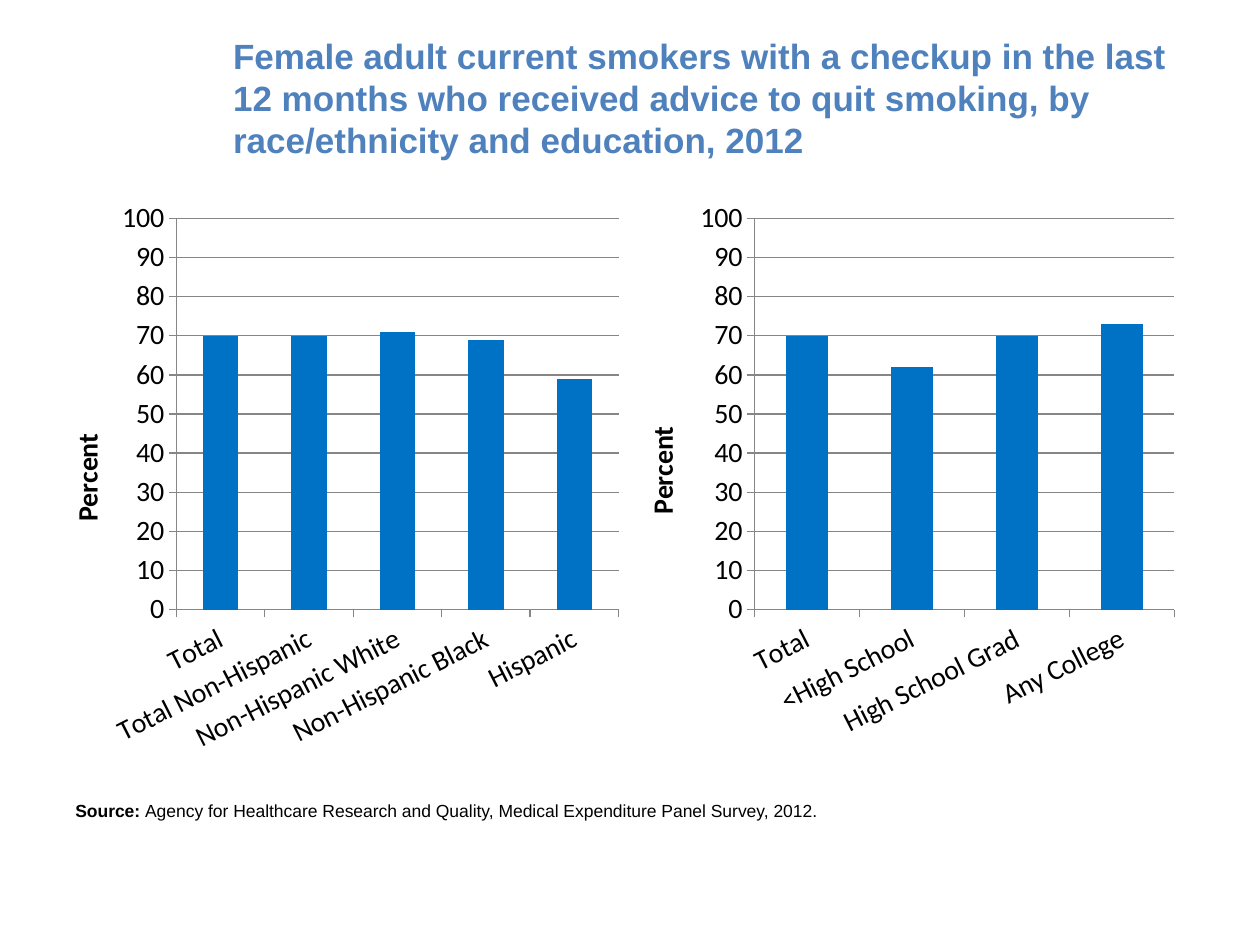
import pptx
import pptx.chart.data
import pptx.dml.color
import pptx.enum.chart
import pptx.enum.text
import pptx.oxml
import pptx.oxml.ns
import pptx.util
from pptx.util import Cm

BLACK, GRID_GREY, BAR_BLUE, TITLE_BLUE = "000000", "868686", "0072C6", "4F81BD"
CHART_TOP, CHART_SIZE = Cm(4.06), Cm(11.43)
LABEL_ANGLE = -27

# left edge, values by group, inner plot area (x, y, width, height as shares)
CHARTS = [
    (Cm(1.27),
     {"Total": 70, "Total Non-Hispanic": 70, "Non-Hispanic White": 71,
      "Non-Hispanic Black": 69, "Hispanic": 59},
     (0.2, 0.03, 0.78, 0.69)),
    (Cm(12.7),
     {"Total": 70, "<High School": 62, "High School Grad": 70, "Any College": 73},
     (0.22, 0.03, 0.74, 0.69)),
]


def rgb(hex_colour):
    return pptx.dml.color.RGBColor.from_string(hex_colour)


def set_all(target, values):
    for attribute, value in values.items():
        setattr(target, attribute, value)


def style_font(font, size, colour=BLACK, name="Arial", bold=False):
    set_all(font, {"name": name, "size": pptx.util.Pt(size), "bold": bold})
    font.color.rgb = rgb(colour)


def style_line(line, colour=GRID_GREY):
    line.color.rgb = rgb(colour)
    line.width = pptx.util.Pt(0.75)


def add_text(slide, place, runs, size, colour, anchor):
    """Add one paragraph made of (text, bold) runs."""
    frame = slide.shapes.add_textbox(*place).text_frame
    set_all(frame, {"word_wrap": True, "vertical_anchor": anchor})
    paragraph = frame.paragraphs[0]
    for text, bold in runs:
        run = paragraph.add_run()
        run.text = text
        style_font(run.font, size, colour, bold=bold)


def set_plot_area(chart, shares):
    parts = "".join(f'<c:{tag} val="{share}"/>' for tag, share in zip("xywh", shares))
    layout = pptx.oxml.parse_xml(
        f'<c:layout {pptx.oxml.ns.nsdecls("c")}><c:manualLayout>'
        '<c:layoutTarget val="inner"/><c:xMode val="edge"/><c:yMode val="edge"/>'
        f'{parts}</c:manualLayout></c:layout>')
    plot_area = chart._chartSpace.chart.plotArea
    for old in plot_area.findall(pptx.oxml.ns.qn("c:layout")):
        plot_area.remove(old)
    plot_area.insert(0, layout)


def style_axes(chart):
    groups, percent = chart.category_axis, chart.value_axis
    for axis in (groups, percent):
        axis.major_tick_mark = pptx.enum.chart.XL_TICK_MARK.OUTSIDE
        style_font(axis.tick_labels.font, 16, name="Calibri")
        style_line(axis.format.line)
    label_body = groups._element.find(".//" + pptx.oxml.ns.qn("a:bodyPr"))
    label_body.set("rot", str(LABEL_ANGLE * 60000))

    set_all(percent, {"minimum_scale": 0, "maximum_scale": 100, "major_unit": 10,
                      "has_major_gridlines": True, "has_title": True})
    set_all(percent.tick_labels, {"number_format": "0", "number_format_is_linked": False})
    style_line(percent.major_gridlines.format.line)
    heading = percent.axis_title.text_frame
    heading.text = "Percent"
    style_font(heading.paragraphs[0].runs[0].font, 16, name="Calibri", bold=True)


def add_percent_chart(slide, left, percents, plot_shares):
    data = pptx.chart.data.CategoryChartData()
    data.categories = list(percents)
    data.add_series("Series 1", list(percents.values()))
    chart = slide.shapes.add_chart(
        pptx.enum.chart.XL_CHART_TYPE.COLUMN_CLUSTERED,
        left, CHART_TOP, CHART_SIZE, CHART_SIZE, data).chart
    set_all(chart, {"has_legend": False, "has_title": False})
    style_font(chart.font, 10)
    set_all(chart.plots[0], {"gap_width": 150, "vary_by_categories": False})
    bars = chart.plots[0].series[0].format.fill
    bars.solid()
    bars.fore_color.rgb = rgb(BAR_BLUE)
    style_axes(chart)
    set_plot_area(chart, plot_shares)


def main():
    deck = pptx.Presentation()
    set_all(deck, {"slide_width": Cm(25.4), "slide_height": Cm(19.05)})
    slide = deck.slides.add_slide(deck.slide_layouts[6])
    anchors = pptx.enum.text.MSO_ANCHOR

    add_text(slide, (Cm(4.45), Cm(0.76), Cm(19.68), Cm(2.41)),
             [("Female adult current smokers with a checkup in the last 12 months who "
               "received advice to quit smoking, by race/ethnicity and education, 2012", True)],
             20, TITLE_BLUE, anchors.MIDDLE)
    for left, percents, plot_shares in CHARTS:
        add_percent_chart(slide, left, percents, plot_shares)
    add_text(slide, (Cm(1.27), Cm(16), Cm(22.86), Cm(0.69)),
             [("Source: ", True),
              ("Agency for Healthcare Research and Quality, "
               "Medical Expenditure Panel Survey, 2012.", False)],
             10, BLACK, anchors.TOP)
    deck.save("out.pptx")


if __name__ == "__main__":
    main()
